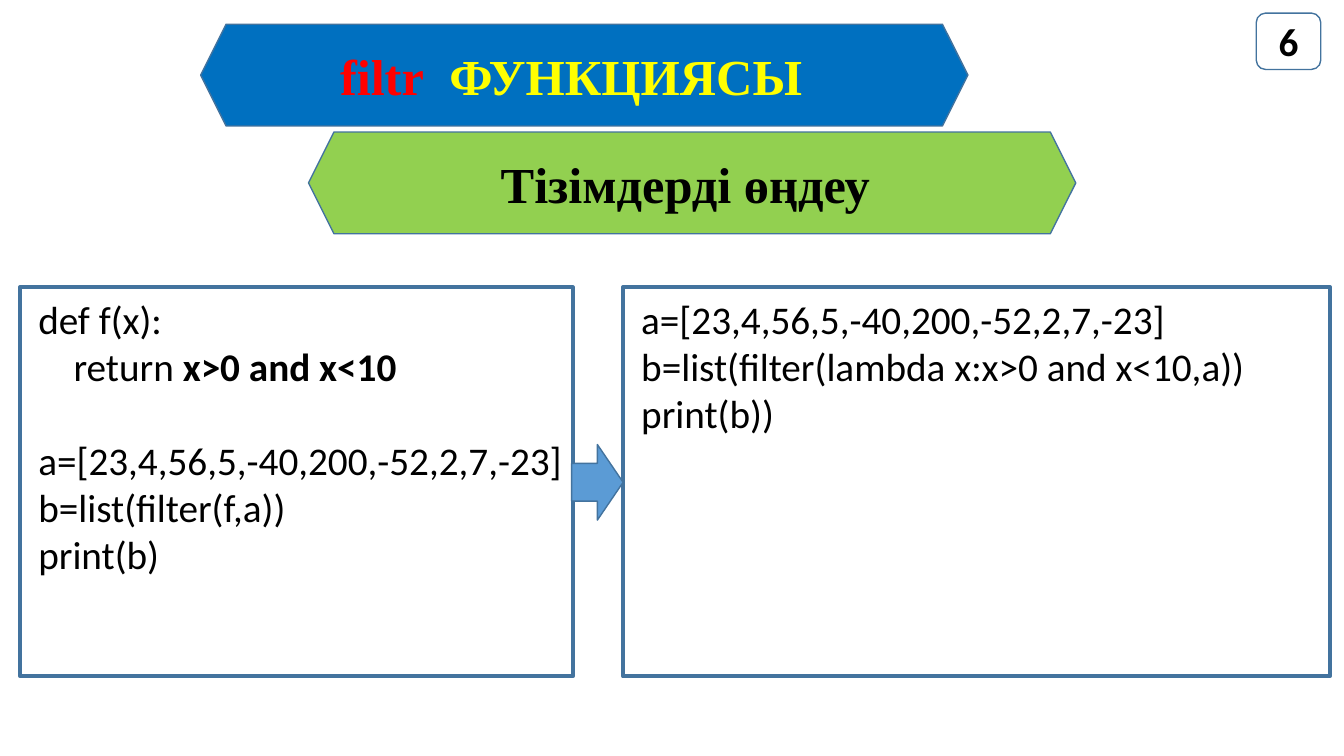
from dataclasses import dataclass

from pptx import Presentation
from pptx.dml.color import RGBColor
from pptx.enum.shapes import MSO_SHAPE
from pptx.enum.text import MSO_ANCHOR, MSO_AUTO_SIZE, PP_ALIGN
from pptx.oxml.ns import qn
from pptx.util import Inches, Pt

HEXAGON = MSO_SHAPE.HEXAGON
ARROW = MSO_SHAPE.RIGHT_ARROW
ROUNDED = MSO_SHAPE.ROUNDED_RECTANGLE
TOP = MSO_ANCHOR.TOP
MIDDLE = MSO_ANCHOR.MIDDLE
NO_FIT = MSO_AUTO_SIZE.NONE
LEFT = PP_ALIGN.LEFT
CENTER = PP_ALIGN.CENTER

BLUE = RGBColor(0x00, 0x70, 0xC0)
GREEN = RGBColor(0x92, 0xD0, 0x50)
SKY = RGBColor(0x5B, 0x9B, 0xD5)
OUTLINE = RGBColor(0x43, 0x73, 0x9E)
RED = RGBColor(0xFF, 0x00, 0x00)
YELLOW = RGBColor(0xFF, 0xFF, 0x00)
BLACK = RGBColor(0x00, 0x00, 0x00)

SERIF = "Times New Roman"
SANS = "Calibri"
BANNER_SIZE = 36
CODE_SIZE = 28
LINE_PITCH = 33.6
CODE_INDENT = 0.1
RETURN_INDENT = 0.35
LAYOUT_TWO_CONTENT = 3


@dataclass(frozen=True)
class Box:
    left: float
    top: float
    width: float
    height: float


@dataclass(frozen=True)
class Span:
    text: str
    color: RGBColor = BLACK
    bold: bool = False
    spacing: int = 0


@dataclass(frozen=True)
class CodeLine:
    spans: tuple[Span, ...]
    indent: float = 0
    lines_before: int = 0


@dataclass(frozen=True)
class CodePanel:
    placeholder: int
    box: Box
    lines: tuple[CodeLine, ...]


TITLE_BANNER = Box(1.99, 0.24, 7.61, 1.01)
TOPIC_BANNER = Box(3.06, 1.31, 7.61, 1.01)
TITLE_TEXT = Box(1.86, 0.24, 7.61, 1.01)
NUMBER_BADGE = Box(12.46, 0.13, 0.64, 0.56)
PANEL_ARROW = Box(5.67, 4.41, 0.51, 0.75)

TITLE = (
    Span("filtr", RED, True),
    Span(" ", RED, True, 900),
    Span("ФУНКЦИЯСЫ", YELLOW, True),
)
DATA_LINE = "a=[23,4,56,5,-40,200,-52,2,7,-23]"
PANELS = (
    CodePanel(1, Box(0.2, 2.85, 5.48, 3.86), (
        CodeLine((Span("def f(x):"),)),
        CodeLine((Span("return "), Span("x>0 and x<10", bold=True)), RETURN_INDENT),
        CodeLine((Span(DATA_LINE),), lines_before=1),
        CodeLine((Span("b=list(filter(f,a))"),)),
        CodeLine((Span("print(b)"),)),
    )),
    CodePanel(2, Box(6.18, 2.85, 7.01, 3.86), (
        CodeLine((Span(DATA_LINE),)),
        CodeLine((Span("b=list(filter(lambda x:x>0 and x<10,a))"),)),
        CodeLine((Span("print(b))"),)),
    )),
)


def place(shape, box: Box) -> None:
    shape.left, shape.top = Inches(box.left), Inches(box.top)
    shape.width, shape.height = Inches(box.width), Inches(box.height)


def set_outline(shape, width: float) -> None:
    shape.line.color.rgb = OUTLINE
    shape.line.width = Pt(width)


def add_figure(page, kind: MSO_SHAPE, box: Box, fill: RGBColor | None = None):
    shape = page.shapes.add_shape(kind, 0, 0, 0, 0)
    place(shape, box)
    shape.shadow.inherit = False
    if fill is None:
        shape.fill.background()
    else:
        shape.fill.solid()
        shape.fill.fore_color.rgb = fill
    set_outline(shape, 1)
    return shape


def add_spans(para, spans: tuple[Span, ...], font: str, size: int) -> None:
    for span in spans:
        run = para.add_run()
        run.text = span.text
        run.font.name = font
        run.font.size = Pt(size)
        run.font.bold = span.bold
        run.font.color.rgb = span.color
        if span.spacing:
            run.font._element.set("spc", str(span.spacing))


def write_centered(shape, spans: tuple[Span, ...], font: str, size: int) -> None:
    frame = shape.text_frame
    frame.auto_size = NO_FIT
    frame.word_wrap = True
    frame.vertical_anchor = MIDDLE
    para = frame.paragraphs[0]
    para.alignment = CENTER
    add_spans(para, spans, font, size)


def fill_panel(page, panel: CodePanel) -> None:
    body = page.placeholders[panel.placeholder]
    place(body, panel.box)
    set_outline(body, 3)
    frame = body.text_frame
    frame.auto_size = NO_FIT
    frame.word_wrap = True
    frame.vertical_anchor = TOP
    frame.margin_left = frame.margin_top = frame.margin_right = Inches(0.08)
    frame.margin_bottom = 0
    for index, line in enumerate(panel.lines):
        para = frame.add_paragraph() if index else frame.paragraphs[0]
        para.alignment = LEFT
        para.space_before = Pt(LINE_PITCH * line.lines_before)
        para.space_after = Pt(0)
        properties = para._p.get_or_add_pPr()
        properties.set("marL", str(Inches(CODE_INDENT + line.indent)))
        properties.set("indent", "0")
        properties.append(properties.makeelement(qn("a:buNone"), {}))
        add_spans(para, line.spans, SANS, CODE_SIZE)


def main() -> None:
    deck = Presentation()
    deck.slide_width, deck.slide_height = Inches(13.33), Inches(7.5)
    page = deck.slides.add_slide(deck.slide_layouts[LAYOUT_TWO_CONTENT])

    title = page.shapes.title
    banner = add_figure(page, HEXAGON, TITLE_BANNER, BLUE)
    title._element.addprevious(banner._element)
    place(title, TITLE_TEXT)
    write_centered(title, TITLE, SERIF, BANNER_SIZE)

    for panel in PANELS:
        fill_panel(page, panel)
    add_figure(page, ARROW, PANEL_ARROW, SKY)

    badge = add_figure(page, ROUNDED, NUMBER_BADGE)
    write_centered(badge, (Span("6", bold=True),), SANS, CODE_SIZE)

    topic = add_figure(page, HEXAGON, TOPIC_BANNER, GREEN)
    topic.text_frame.margin_right = Inches(0.23)
    write_centered(topic, (Span("Тізімдерді өңдеу", bold=True),), SERIF, BANNER_SIZE)

    deck.save("out.pptx")


if __name__ == "__main__":
    main()
